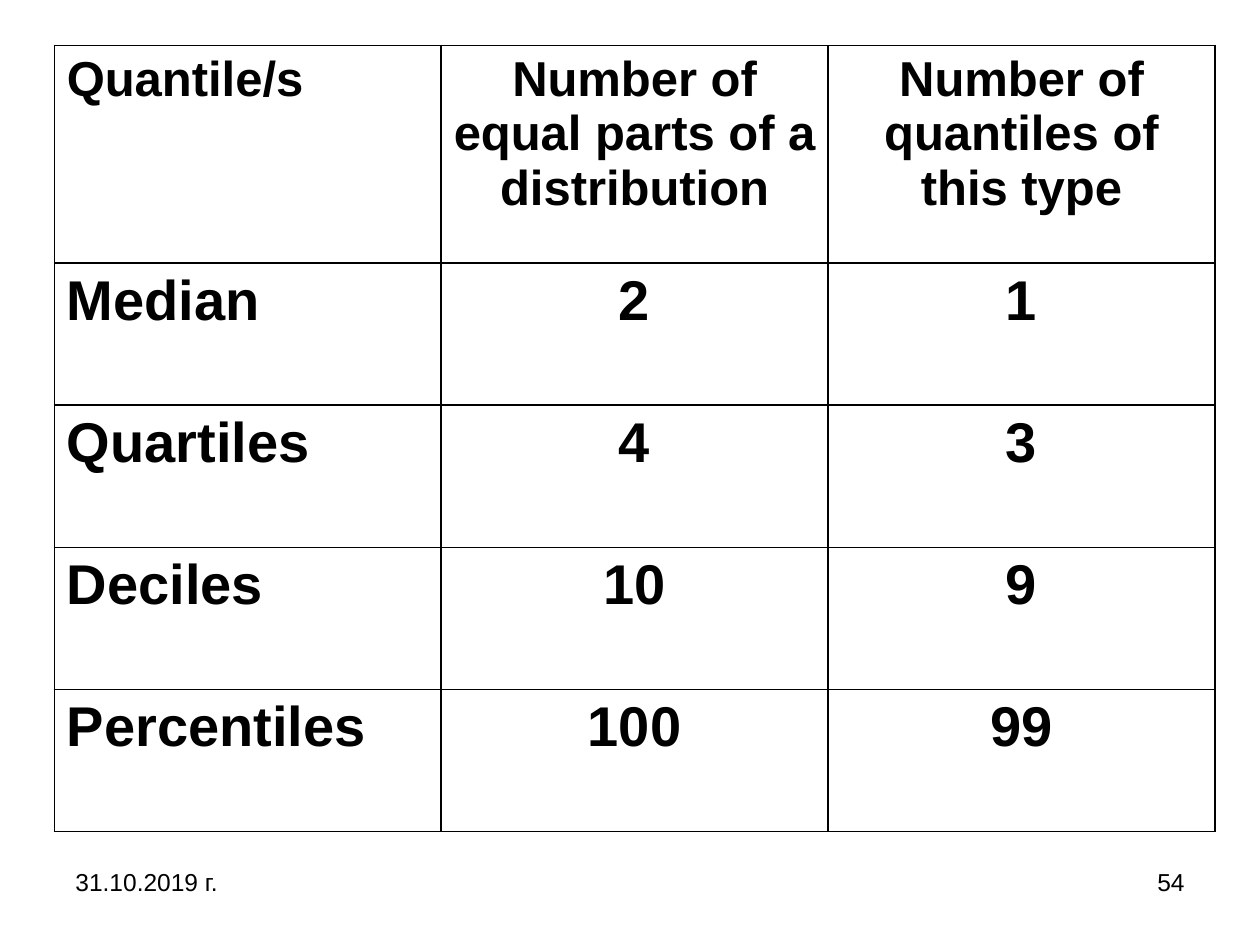
from dataclasses import dataclass

from lxml.etree import SubElement
from pptx import Presentation
from pptx.dml.color import RGBColor as RGB
from pptx.enum.text import PP_ALIGN as Align
from pptx.oxml.ns import qn
from pptx.util import Pt


@dataclass(frozen=True)
class Theme:
    font: str = "Arial"
    ink: str = "000000"
    head: int = 28
    body: int = 32
    foot: int = 14
    rule: int = 1


theme = Theme()


def style(par, size, align, bold=False):
    par.alignment = align
    for run in par.runs:
        font = run.font
        font.name, font.size, font.bold = theme.font, Pt(size), bold
        font.color.rgb = RGB.from_string(theme.ink)


def border(cell):
    props = cell._tc.get_or_add_tcPr()
    for i, side in enumerate(("lnL", "lnR", "lnT", "lnB")):
        line = props.makeelement(qn(f"a:{side}"), {"w": str(Pt(theme.rule))})
        fill = SubElement(line, qn("a:solidFill"))
        SubElement(fill, qn("a:srgbClr"), val=theme.ink)
        props.insert(i, line)


deck = Presentation()
deck.slide_width, deck.slide_height = Pt(720), Pt(540)
slide = deck.slides.add_slide(deck.slide_layouts[6])

# Quantile table
rows = [
    ("Quantile/s", "Number of equal parts of a distribution",
     "Number of quantiles of this type"),
    ("Median", "2", "1"),
    ("Quartiles", "4", "3"),
    ("Deciles", "10", "9"),
    ("Percentiles", "100", "99"),
]
tall, short, wide = 124.4, 81.2, 221.1
frame = slide.shapes.add_table(
    len(rows), 3, Pt(31), Pt(26), Pt(3 * wide), Pt(tall + 4 * short))
table = frame.table
table.first_row = table.horz_banding = False
for col in table.columns:
    col.width = Pt(wide)
for r, row in enumerate(rows):
    table.rows[r].height = Pt(short if r else tall)
    for c, text in enumerate(row):
        cell = table.cell(r, c)
        cell.text_frame.text = text
        style(cell.text_frame.paragraphs[0],
              theme.body if r else theme.head,
              Align.CENTER if c else Align.JUSTIFY, bold=True)
        cell.fill.background()
        border(cell)

# Date and slide number
for left, text, align in ((36, "31.10.2019 г.", Align.LEFT),
                          (516, "54", Align.RIGHT)):
    box = slide.shapes.add_textbox(Pt(left), Pt(492), Pt(168), Pt(37.5))
    box.text_frame.word_wrap = True
    box.text_frame.text = text
    style(box.text_frame.paragraphs[0], theme.foot, align)

deck.save("out.pptx")
